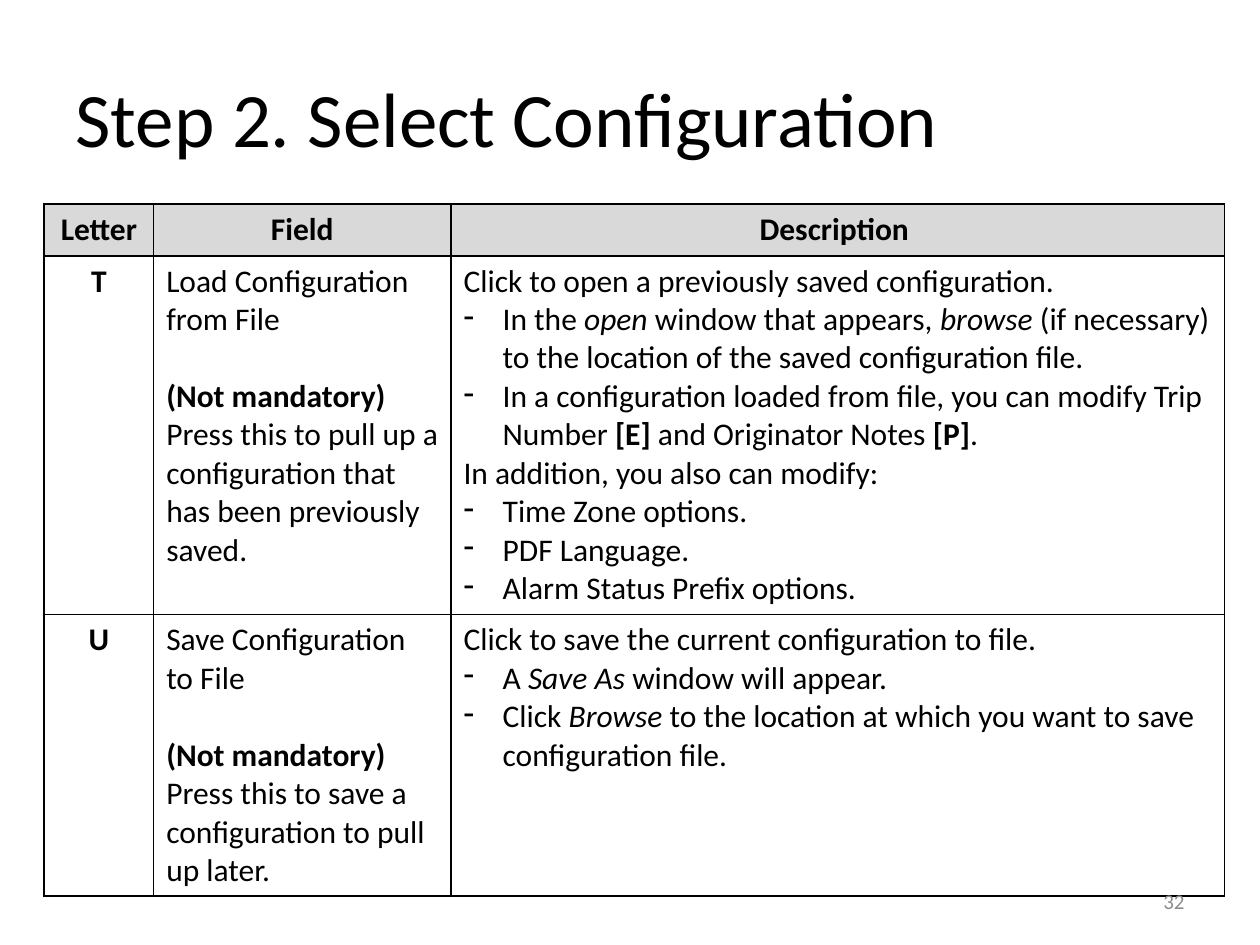
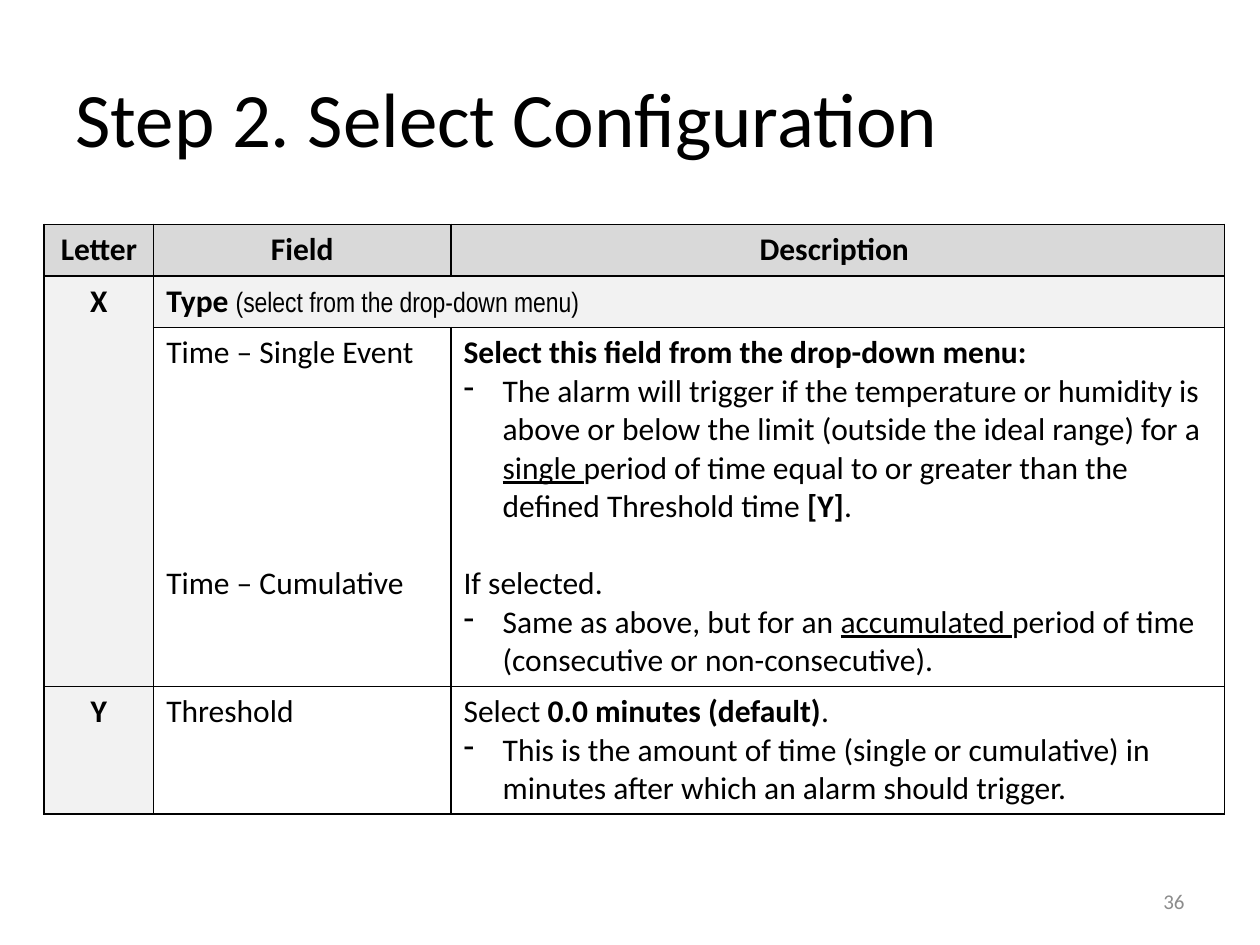
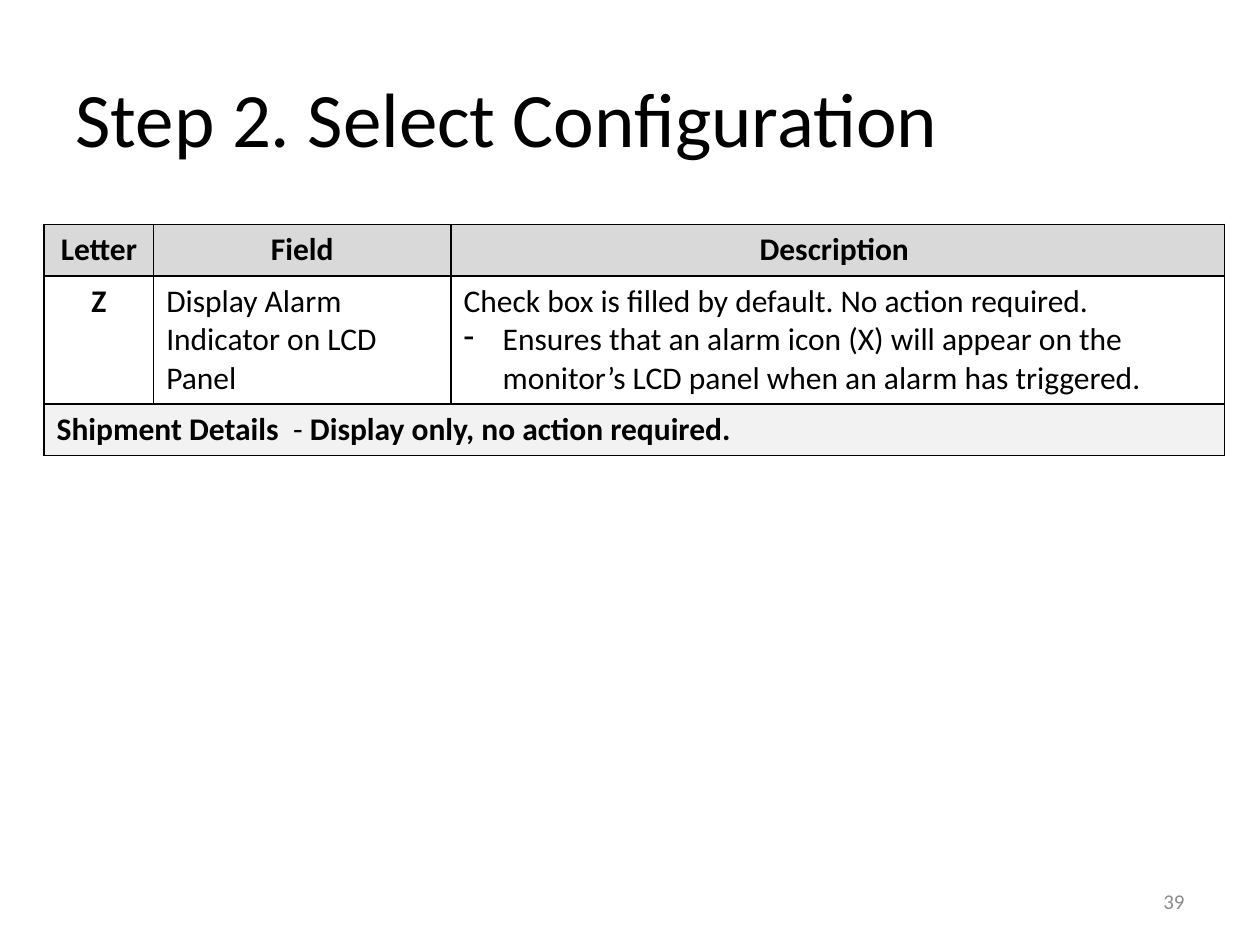
from dataclasses import dataclass
from itertools import product
from typing import Optional

from lxml.etree import SubElement
from pptx import Presentation
from pptx.dml.color import RGBColor
from pptx.enum.text import MSO_ANCHOR, PP_ALIGN
from pptx.oxml import parse_xml
from pptx.oxml.ns import nsdecls, qn
from pptx.util import Inches, Pt

BLACK = "000000"
WHITE = "FFFFFF"
HEADER_GREY = "D9D9D9"
BAND_GREY = "F2F2F2"
NUMBER_GREY = "8C8C8C"
FONT = "Calibri"
NARROW_FONT = "Arial Narrow"
TITLE = "Step 2. Select Configuration"
COLUMN_WIDTHS = (0.87, 2.36, 6.14)
ROW_HEIGHT = 0.41
TABLE_LEFT = 0.35
BLANK_LINE = 22
BULLET_INDENT = 0.31


@dataclass(frozen=True)
class Span:
    text: str
    bold: bool = False
    italic: bool = False
    underline: bool = False
    size: int = 18
    font: str = FONT


@dataclass(frozen=True)
class Line:
    spans: tuple[Span, ...]
    bullet: bool = False
    centred: bool = False
    lines_before: int = 0


@dataclass(frozen=True)
class Cell:
    lines: tuple[Line, ...]
    fill: str = WHITE
    row_span: int = 1
    column_span: int = 1


Row = tuple[Optional[Cell], ...]


@dataclass(frozen=True)
class TableSlide:
    number: str
    top: float
    height: float
    rows: tuple[Row, ...]
    row_heights: tuple[float, ...]


def bold(text: str) -> Span:
    return Span(text, bold=True)


def italic(text: str) -> Span:
    return Span(text, italic=True)


def underlined(text: str) -> Span:
    return Span(text, underline=True)


def line(*parts: str | Span, bullet: bool = False, lines_before: int = 0) -> Line:
    spans = tuple(Span(part) if isinstance(part, str) else part for part in parts)
    return Line(spans, bullet, lines_before=lines_before)


def item(*parts: str | Span) -> Line:
    return line(*parts, bullet=True)


def cell(*lines: Line) -> Cell:
    return Cell(lines)


def label(text: str, fill: str = WHITE, row_span: int = 1) -> Cell:
    return Cell((Line((bold(text),), centred=True),), fill, row_span)


def optional_field(name: str, purpose: str) -> Cell:
    return cell(line(name), line(bold("(Not mandatory) "), purpose, lines_before=1))


HEADER = tuple(label(text, HEADER_GREY) for text in ("Letter", "Field", "Description "))

SLIDES = (
    TableSlide("32", 1.62, 5.41, (
        HEADER,
        (
            label("T"),
            optional_field(
                "Load Configuration from File",
                "Press this to pull up a configuration that has been previously saved.",
            ),
            cell(
                line("Click to open a previously saved configuration."),
                item("In the", italic(" open "), "window that appears, ", italic("browse"),
                     " (if necessary) to the location of the saved configuration file."),
                item("In a configuration loaded from file, you can modify Trip Number ",
                     bold("[E]"), " and Originator Notes ", bold("[P]"), "."),
                line("In addition, you also can modify:"),
                item("Time Zone options."),
                item("PDF Language."),
                item("Alarm Status Prefix options."),
            ),
        ),
        (
            label("U"),
            optional_field(
                "Save Configuration to File",
                "Press this to save a configuration to pull up later.",
            ),
            cell(
                line("Click to save the current configuration to file."),
                item("A ", italic("Save As "), "window will appear."),
                item("Click ", italic("Browse"),
                     " to the location at which you want to save configuration file."),
            ),
        ),
    ), (ROW_HEIGHT,) * 3),
    TableSlide("36", 1.78, 4.61, (
        HEADER,
        (
            label("X", BAND_GREY, row_span=2),
            Cell((line(bold("Type "), Span("(select from the drop-down menu)",
                                           size=16, font=NARROW_FONT)),),
                 BAND_GREY, column_span=2),
            None,
        ),
        (
            None,
            cell(line("Time – Single Event"), line("Time – Cumulative", lines_before=5)),
            cell(
                line(bold("Select this field from the drop-down menu:")),
                item("The alarm will trigger if the temperature or humidity is above or below "
                     "the limit (outside the ideal range) for a ", underlined("single "),
                     "period of time equal to or greater than the defined Threshold time ",
                     bold("[Y]"), "."),
                line("If selected.", lines_before=1),
                item("Same as above, but for an ", underlined("accumulated "),
                     "period of time (consecutive or non-consecutive)."),
            ),
        ),
        (
            label("Y", BAND_GREY),
            cell(line("Threshold")),
            cell(
                line("Select ", bold("0.0 minutes (default)"), "."),
                item("This is the amount of time (single or cumulative) in minutes "
                     "after which an alarm should trigger."),
            ),
        ),
    ), (ROW_HEIGHT, ROW_HEIGHT, 0.81, ROW_HEIGHT)),
    TableSlide("39", 1.78, 1.81, (
        HEADER,
        (
            label("Z"),
            cell(line("Display Alarm Indicator on LCD Panel")),
            cell(
                line("Check box is filled by default. No action required."),
                item("Ensures that an alarm icon (X) will appear on the monitor’s LCD panel "
                     "when an alarm has triggered."),
            ),
        ),
        (
            Cell((line(bold("Shipment Details  "), "- ",
                       bold("Display only, no action required.")),),
                 BAND_GREY, column_span=3),
            None,
            None,
        ),
    ), (ROW_HEIGHT,) * 3),
)


def colour(value: str) -> RGBColor:
    return RGBColor.from_string(value)


def style_run(run, size: int, value: str = BLACK, font: str = FONT) -> None:
    run.font.name = font
    run.font.size = Pt(size)
    run.font.color.rgb = colour(value)


def add_title(slide) -> None:
    title = slide.shapes.title
    title.left, title.top = Inches(0.5), Inches(0.3)
    title.width, title.height = Inches(9), Inches(1.25)
    title.text_frame.text = TITLE
    title.text_frame.vertical_anchor = MSO_ANCHOR.MIDDLE
    paragraph = title.text_frame.paragraphs[0]
    paragraph.alignment = PP_ALIGN.LEFT
    style_run(paragraph.runs[0], 44)


def add_number(slide, number: str) -> None:
    box = slide.shapes.add_textbox(Inches(7.17), Inches(6.95), Inches(2.33), Inches(0.4))
    frame = box.text_frame
    frame.word_wrap = True
    frame.vertical_anchor = MSO_ANCHOR.MIDDLE
    frame.text = number
    paragraph = frame.paragraphs[0]
    paragraph.alignment = PP_ALIGN.RIGHT
    style_run(paragraph.runs[0], 12, NUMBER_GREY)


def add_bullet(paragraph) -> None:
    properties = paragraph._p.get_or_add_pPr()
    properties.set("marL", str(Inches(BULLET_INDENT)))
    properties.set("indent", str(-Inches(BULLET_INDENT)))
    SubElement(properties, qn("a:buChar"), char="-")


def write_line(paragraph, content: Line) -> None:
    paragraph.alignment = PP_ALIGN.CENTER if content.centred else PP_ALIGN.LEFT
    if content.lines_before:
        paragraph.space_before = Pt(BLANK_LINE * content.lines_before)
    if content.bullet:
        add_bullet(paragraph)
    for span in content.spans:
        run = paragraph.add_run()
        run.text = span.text
        style_run(run, span.size, font=span.font)
        run.font.bold = span.bold
        run.font.italic = span.italic
        run.font.underline = span.underline


def add_borders(table_cell) -> None:
    properties = table_cell._tc.get_or_add_tcPr()
    for position, side in enumerate(("lnL", "lnR", "lnT", "lnB")):
        border = parse_xml(
            f'<a:{side} {nsdecls("a")} w="{Pt(1)}"><a:solidFill>'
            f'<a:srgbClr val="{BLACK}"/></a:solidFill></a:{side}>'
        )
        properties.insert(position, border)


def fill_cell(table_cell, content: Cell) -> None:
    frame = table_cell.text_frame
    for index, content_line in enumerate(content.lines):
        paragraph = frame.add_paragraph() if index else frame.paragraphs[0]
        write_line(paragraph, content_line)


def add_field_table(slide, content: TableSlide) -> None:
    frame = slide.shapes.add_table(
        len(content.rows), len(COLUMN_WIDTHS), Inches(TABLE_LEFT), Inches(content.top),
        Inches(sum(COLUMN_WIDTHS)), Inches(content.height),
    )
    table = frame.table
    table.first_row = False
    table.horz_banding = False
    for column, width in zip(table.columns, COLUMN_WIDTHS):
        column.width = Inches(width)
    for row, height in zip(table.rows, content.row_heights):
        row.height = Inches(height)
    frame.height = Inches(content.height)

    for row, column in product(range(len(content.rows)), range(len(COLUMN_WIDTHS))):
        table_cell = table.cell(row, column)
        cell_content = content.rows[row][column]
        table_cell.fill.solid()
        table_cell.fill.fore_color.rgb = colour(cell_content.fill if cell_content else BAND_GREY)
        add_borders(table_cell)
        if cell_content is None:
            continue
        fill_cell(table_cell, cell_content)
        last_row = row + cell_content.row_span - 1
        last_column = column + cell_content.column_span - 1
        if (last_row, last_column) != (row, column):
            table_cell.merge(table.cell(last_row, last_column))


def main() -> None:
    presentation = Presentation()
    presentation.slide_width = Inches(10)
    presentation.slide_height = Inches(7.5)
    title_only = presentation.slide_layouts[5]
    for content in SLIDES:
        slide = presentation.slides.add_slide(title_only)
        add_title(slide)
        add_field_table(slide, content)
        add_number(slide, content.number)
    presentation.save("out.pptx")


if __name__ == "__main__":
    main()
